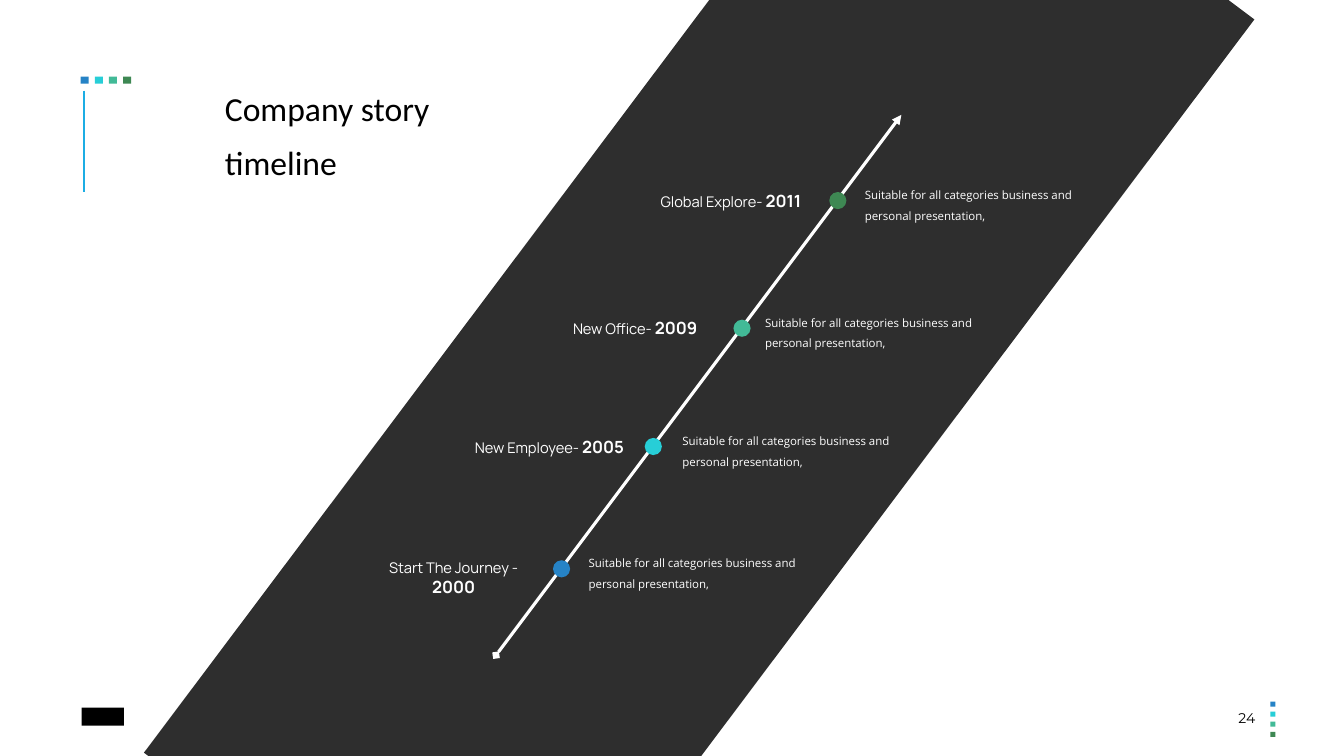
import lxml.etree
import pptx
import pptx.dml.color
import pptx.enum.shapes
import pptx.enum.text
import pptx.oxml.ns
import pptx.util

Inches, Pt = pptx.util.Inches, pptx.util.Pt
ALIGN = pptx.enum.text.PP_ALIGN
ANCHOR = pptx.enum.text.MSO_ANCHOR
SHAPE = pptx.enum.shapes.MSO_SHAPE
qn = pptx.oxml.ns.qn

COLORS = {"black": "000000", "white": "FFFFFF", "line": "1CADE4",
          "blue": "2683C6", "cyan": "27CED7", "teal": "42BA97", "green": "3E8853"}
ACCENTS = ("blue", "cyan", "teal", "green")
DETAIL = "Suitable for all categories business and personal presentation,"
# name, year, distance along the axis, label width, label centre to dot, dot to detail
MILESTONES = [
    ("Start The Journey - ", "2000", 0.65, 1.93, 1.07, 0.17),
    ("New Employee- ", "2005", 1.56, 1.73, 1.03, 0.19),
    ("New Office- ", "2009", 2.44, 1.46, 1.06, 0.13),
    ("Global Explore- ", "2011", 3.39, 1.66, 1.06, 0.17),
]


def rgb(name):
    return pptx.dml.color.RGBColor.from_string(COLORS[name])


def add_filled(s, kind, box, color, rotation=0):
    sp = s.shapes.add_shape(kind, *map(Inches, box))
    sp.shadow.inherit = False
    sp.fill.solid()
    sp.fill.fore_color.rgb = rgb(color)
    sp.line.fill.background()
    sp.rotation = rotation
    return sp


def add_line(s, start, end, color, width):
    line = s.shapes.add_connector(pptx.enum.shapes.MSO_CONNECTOR.STRAIGHT,
                                  *map(Inches, start + end))
    line.line.color.rgb = rgb(color)
    line.line.width = Pt(width)
    lxml.etree.SubElement(line._element.spPr, qn("a:effectLst"))
    return line


def style(r, font, size, color, bold=False):
    r.font.name, r.font.size, r.font.bold = font, Pt(size), bold
    r.font.color.rgb = rgb(color)


def add_text(s, box, runs, align):
    """Runs are tuples of text, font, size, colour and, if wanted, bold."""
    tf = s.shapes.add_textbox(*map(Inches, box)).text_frame
    tf.word_wrap = True
    p = tf.paragraphs[0]
    p.alignment = align
    for text, *look in runs:
        r = p.add_run()
        r.text = text
        style(r, *look)
    return tf


def add_swatches(s, box, dx, dy):
    """Row or column of accent squares, the first one at the box."""
    x, y, w, h = box
    for i, color in enumerate(ACCENTS):
        add_filled(s, SHAPE.RECTANGLE, (x + i * dx, y + i * dy, w, h), color)


def add_heading(s, box):
    x, y, w, h = box
    add_swatches(s, (x, y, 0.08, 0.07), 0.14, 0)
    add_line(s, (x + 0.03, y + 0.14), (x + 0.03, y + h), "line", 1.5)
    title = s.shapes.title
    title.left, title.top, title.width, title.height = map(
        Inches, (x + 1.38, y + 0.42, w - 1.38, 0.37))
    tf = title.text_frame
    tf.text = "Company story\ntimeline"
    tf.word_wrap = True
    tf.auto_size = pptx.enum.text.MSO_AUTO_SIZE.NONE
    tf.vertical_anchor = ANCHOR.MIDDLE
    tf.margin_left = tf.margin_right = tf.margin_top = tf.margin_bottom = Inches(0.05)
    for p in tf.paragraphs:
        p.alignment, p.line_spacing, p.space_before = ALIGN.LEFT, 0.9, Pt(12)
        style(p.runs[0], "Calibri", 24, "black")


def add_footer(s, box):
    x, y, w, h = box
    add_filled(s, SHAPE.RECTANGLE, (x, y + 0.13, 0.42, 0.18), "black")
    tf = add_text(s, (x + w - 0.68, y, 0.55, h), [("24", "Montserrat", 10, "black")],
                  ALIGN.RIGHT)
    tf.vertical_anchor = ANCHOR.MIDDLE
    tf.margin_left = tf.margin_right = Inches(0.07)
    tf.margin_top = tf.margin_bottom = Inches(0.04)
    add_swatches(s, (x + w - 0.05, y + 0.07, 0.05, 0.05), 0, 0.1)


def add_band(s, box):
    band = add_filled(s, SHAPE.RECTANGLE, box, "black", 306.9)
    color = band._element.spPr.find(qn("a:solidFill"))[0]
    lxml.etree.SubElement(color, qn("a:alpha"), val="82000")


def add_milestone(s, x, y, color, name, year, label_w, label_gap, detail_gap):
    """Label, detail and dot around the dot's centre."""
    add_text(s, (x - label_gap - label_w / 2, y - 0.15, label_w, 0.3),
             [(name, "Manrope", 10.5, "white"), (year, "Manrope", 12, "white", True)],
             ALIGN.CENTER)
    tf = add_text(s, (x + detail_gap, y - 0.24, 2.56, 0.68),
                  [(DETAIL, "Open Sans", 8.2, "white")], ALIGN.LEFT)
    tf.paragraphs[0].line_spacing = 1.5
    tf.paragraphs[0].space_before = Pt(10)
    d = 0.17
    add_filled(s, SHAPE.OVAL, (x - d / 2, y - d / 2, d, d), color)


def add_timeline(s, box):
    """Axis along the rising diagonal of the box, with its milestones."""
    x, y, w, h = box
    axis = add_line(s, (x, y + h), (x + w, y), "white", 2.25)
    ln = axis.line._get_or_add_ln()
    for end, kind in (("a:headEnd", "diamond"), ("a:tailEnd", "triangle")):
        lxml.etree.SubElement(ln, qn(end), type=kind)
    for color, (name, year, along, *sizes) in zip(ACCENTS, MILESTONES):
        dot_y = y + h * (1 - along / w) + 0.01
        add_milestone(s, x + along, dot_y, color, name, year, *sizes)


def main():
    prs = pptx.Presentation()
    prs.slide_width, prs.slide_height = Inches(13.33), Inches(7.5)
    s = prs.slides.add_slide(prs.slide_layouts[5])
    add_heading(s, (0.8, 0.76, 4.43, 1.14))
    add_footer(s, (0.81, 6.89, 11.84, 0.47))
    add_band(s, (0.72, 1.61, 12.43, 4.44))
    add_timeline(s, (4.92, 1.14, 4.02, 5.36))
    prs.save("out.pptx")


if __name__ == "__main__":
    main()
